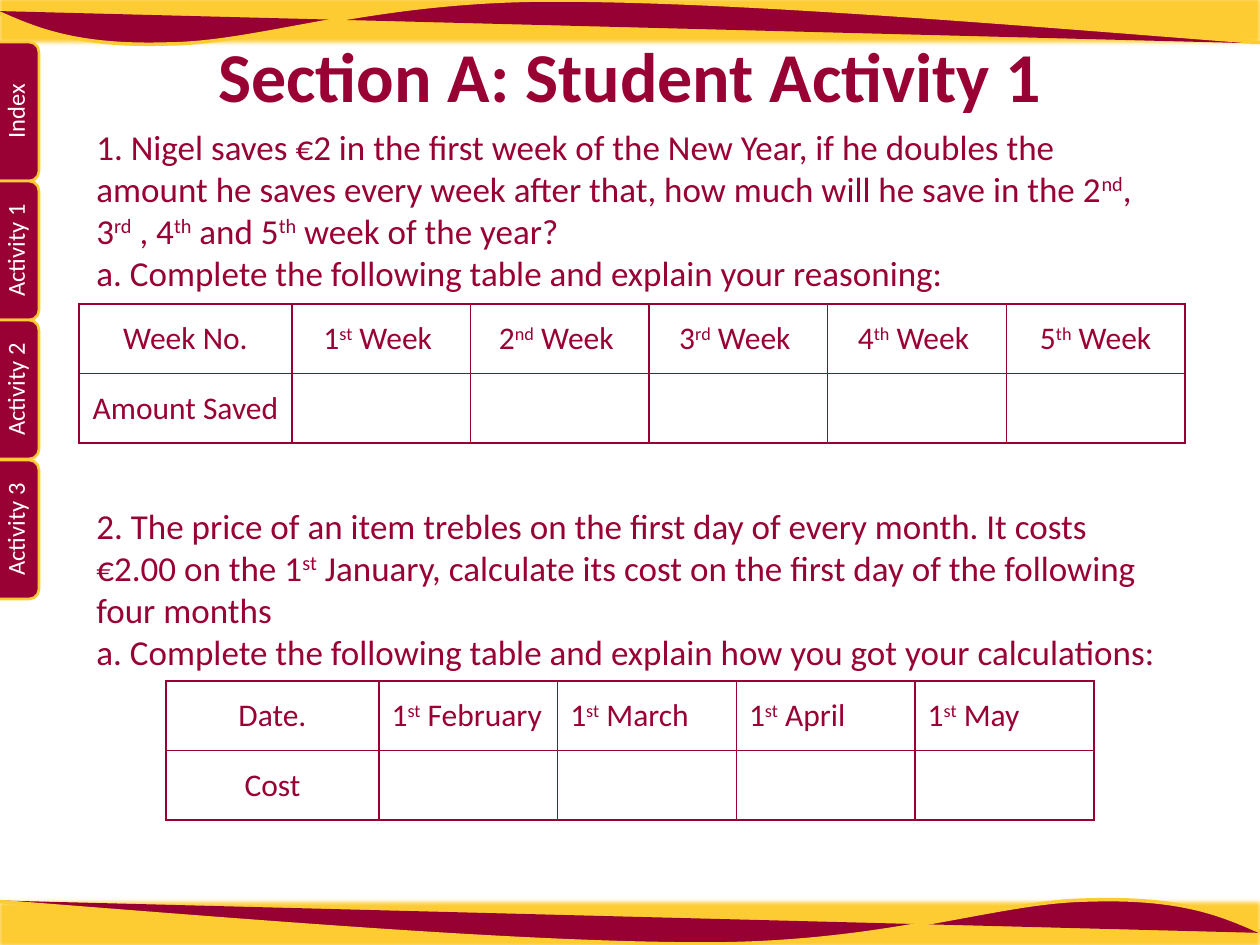
from dataclasses import dataclass

from lxml.etree import SubElement
from pptx import Presentation
from pptx.dml.color import RGBColor
from pptx.enum.shapes import MSO_SHAPE
from pptx.enum.text import MSO_ANCHOR, PP_ALIGN
from pptx.oxml.ns import qn
from pptx.util import Emu, Pt

SCALE = 914400 / 126
FONT = "Calibri"
MAROON = RGBColor(0x99, 0x00, 0x33)
WINE = RGBColor(0x97, 0x00, 0x33)
GOLD = RGBColor(0xFD, 0xCC, 0x33)
WHITE = RGBColor(0xFF, 0xFF, 0xFF)


@dataclass
class Box:
    left: int
    top: int
    width: int
    height: int

    def emu(self) -> list[Emu]:
        return [px(n) for n in (self.left, self.top, self.width, self.height)]


@dataclass
class Grid:
    box: Box
    heads: list[str]
    label: str
    align: PP_ALIGN


HEAD = 213
TAB, DEPTH, FIRST, SPAN = 139, 59, 42, 418
TABS = ["Index", "Activity 1", "Activity 2", "Activity 3"]
BANDS = [Box(-5, -6, 1270, 53), Box(-5, 898, 1270, 53)]
WAVE = [(1279, 44), (1009, 23), (738, 0), (553, 0), (368, 0),
        (262, 43), (169, 44), (76, 47), (35, 29), (-5, 11)]
TURNED = [(1258 - x, 944 - y) for x, y in WAVE]
TITLE = "Section A: Student Activity 1"
LINES = [
    "1. Nigel saves €2 in the first week of the New Year, if he doubles the "
    "amount he saves every week after that, how much will he save in the "
    "2^nd^, 3^rd^ , 4^th^ and 5^th^ week of the year?",
    "a. Complete the following table and explain your reasoning:",
    "2. The price of an item trebles on the first day of every month. It costs",
    "€2.00 on the 1^st^ January, calculate its cost on the first day of the "
    "following four months",
    "a. Complete the following table and explain how you got your calculations:",
]
SECOND = 2
GRIDS = [
    Grid(Box(79, 304, 1106, 139),
         ["Week No.", "1^st^ Week ", "2^nd^ Week ", "3^rd^ Week ",
          "4^th^ Week ", "5^th^ Week"], "Amount Saved", PP_ALIGN.CENTER),
    Grid(Box(166, 681, 928, 139),
         ["Date.", "1^st^ February", "1^st^ March", "1^st^ April",
          "1^st^ May"], "Cost", PP_ALIGN.LEFT),
]


def px(n: float) -> Emu:
    return Emu(round(n * SCALE))


def write(par, text: str, size: int, color: RGBColor, align: PP_ALIGN,
          bold: bool = False) -> None:
    par.alignment = align
    for i, part in enumerate(text.split("^")):
        run = par.add_run()
        run.text = part
        font = run.font
        font.name, font.size, font.bold = FONT, Pt(size), bold
        font.color.rgb = color
        if i % 2:
            run._r.get_or_add_rPr().set("baseline", "30000")


def paint(shape, fill: RGBColor, width: float = 0) -> None:
    shape.shadow.inherit = False
    shape.fill.solid()
    shape.fill.fore_color.rgb = fill
    if width:
        shape.line.color.rgb = GOLD
        shape.line.width = Pt(width)
    else:
        shape.line.fill.background()


def band(shapes, box: Box) -> None:
    shape = shapes.add_shape(MSO_SHAPE.RECTANGLE, *box.emu())
    paint(shape, GOLD)
    glow = shape._element.spPr.find(qn("a:effectLst"))
    SubElement(glow, qn("a:softEdge"), rad="31750")


def wave(shapes, knots: list[tuple[int, int]]) -> None:
    start, *rest = [(px(x), px(y)) for x, y in knots]
    pen = shapes.build_freeform(*start, scale=1.0)
    pen.add_line_segments(rest, close=False)
    shape = pen.convert_to_shape()
    steps = list(shape._element.iter(qn("a:lnTo")))
    route = steps[0].getparent()
    for i in range(0, len(steps), 3):
        bend = SubElement(route, qn("a:cubicBezTo"))
        for step in steps[i:i + 3]:
            bend.append(step[0])
            route.remove(step)
    paint(shape, WINE, 2)


def tab(shapes, row: int, text: str) -> None:
    mid = FIRST + row * SPAN // 3 + TAB // 2
    box = Box(-60, mid - DEPTH // 2, TAB, DEPTH)
    shape = shapes.add_shape(MSO_SHAPE.ROUNDED_RECTANGLE, *box.emu())
    shape.rotation = 270
    paint(shape, MAROON, 1.5)
    frame = shape.text_frame
    frame.vertical_anchor = MSO_ANCHOR.BOTTOM
    write(frame.paragraphs[0], text, 14, WHITE, PP_ALIGN.CENTER)


def label(shapes, box: Box, anchor: MSO_ANCHOR):
    frame = shapes.add_textbox(*box.emu()).text_frame
    frame.word_wrap = True
    frame.vertical_anchor = anchor
    return frame


def edge(cell) -> None:
    props = cell._tc.get_or_add_tcPr()
    for side in ("lnL", "lnR", "lnT", "lnB"):
        line = SubElement(props, qn(f"a:{side}"), w=str(Pt(1)))
        fill = SubElement(line, qn("a:solidFill"))
        SubElement(fill, qn("a:srgbClr"), val=str(MAROON))


def grid(shapes, data: Grid) -> None:
    count = len(data.heads)
    table = shapes.add_table(2, count, *data.box.emu()).table
    table.first_row = table.horz_banding = False
    share = (data.box.width - HEAD) / (count - 1)
    for i, col in enumerate(table.columns):
        col.width = px(share if i else HEAD)
    for cell in table.iter_cells():
        edge(cell)
        cell.fill.background()
        cell.vertical_anchor = MSO_ANCHOR.MIDDLE
    for i, text in enumerate(data.heads):
        align = data.align if i else PP_ALIGN.CENTER
        write(table.cell(0, i).text_frame.paragraphs[0], text, 18, MAROON, align)
    write(table.cell(1, 0).text_frame.paragraphs[0], data.label, 18, MAROON,
          PP_ALIGN.CENTER)


def main() -> None:
    deck = Presentation()
    deck.slide_width, deck.slide_height = px(1260), px(945)
    shapes = deck.slides.add_slide(deck.slide_layouts[6]).shapes
    for box, knots in zip(BANDS, (WAVE, TURNED)):
        band(shapes, box)
        wave(shapes, knots)
    for i, text in enumerate(TABS):
        tab(shapes, i, text)
    title = label(shapes, Box(63, -4, 1134, 158), MSO_ANCHOR.MIDDLE)
    write(title.paragraphs[0], TITLE, 40, MAROON, PP_ALIGN.CENTER, True)
    body = label(shapes, Box(84, 119, 1091, 733), MSO_ANCHOR.TOP)
    for i, text in enumerate(LINES):
        par = body.add_paragraph() if i else body.paragraphs[0]
        write(par, text, 20, MAROON, PP_ALIGN.LEFT)
        if i == SECOND:
            par.space_before = Pt(120.5)
    for data in GRIDS:
        grid(shapes, data)
    deck.save("out.pptx")


if __name__ == "__main__":
    main()
